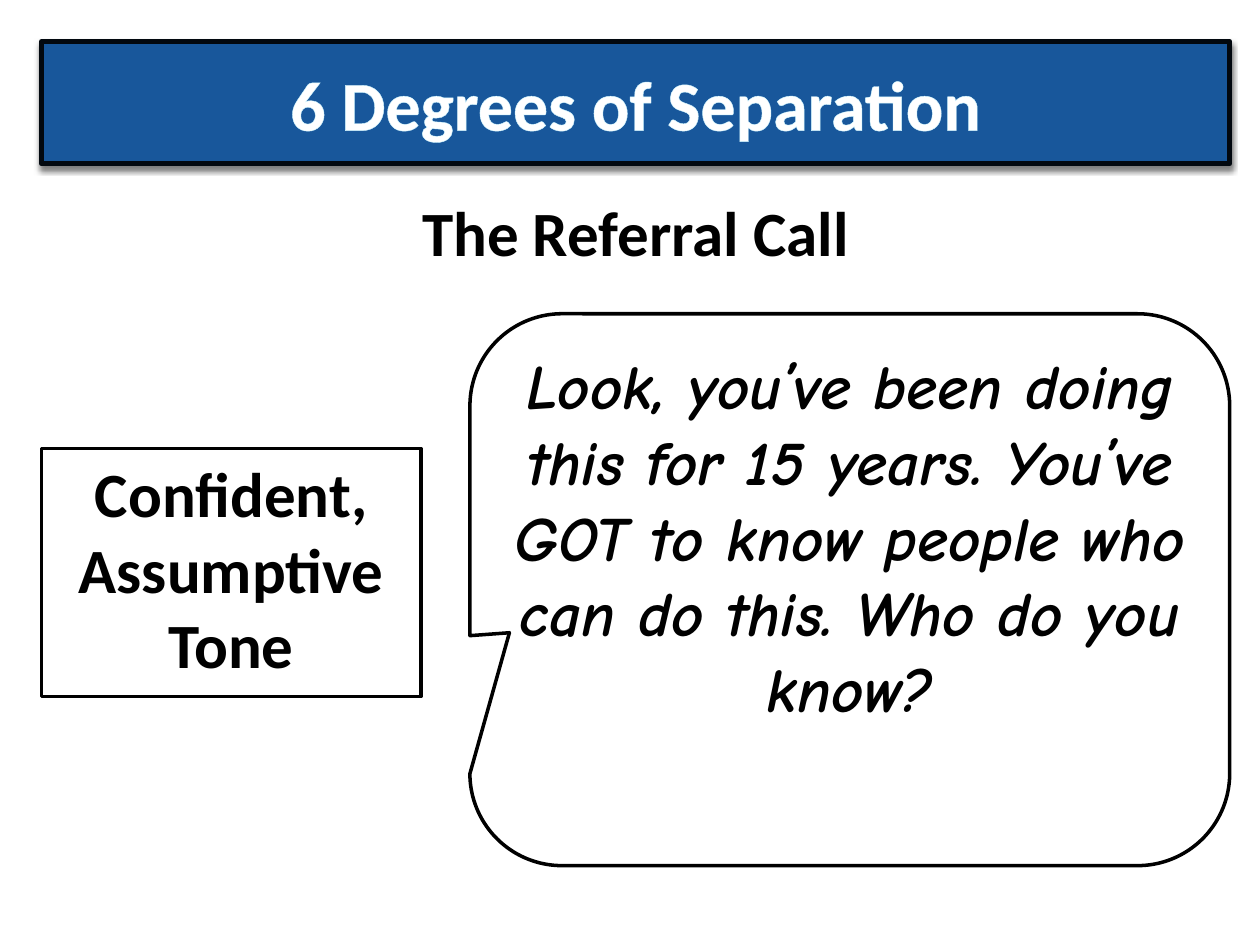
from lxml.etree import SubElement
from pptx import Presentation
from pptx.dml.color import RGBColor
from pptx.enum.shapes import MSO_SHAPE
from pptx.enum.text import MSO_ANCHOR, MSO_AUTO_SIZE, PP_ALIGN
from pptx.oxml import parse_xml
from pptx.oxml.ns import nsdecls, qn
from pptx.util import Inches, Pt

BLUE = RGBColor(0x18, 0x57, 0x9B)
NAVY = RGBColor(0x02, 0x08, 0x0F)
WHITE = RGBColor(0xFF, 0xFF, 0xFF)
BLACK = RGBColor(0x00, 0x00, 0x00)
PALE_BLUE = RGBColor(0xCC, 0xF2, 0xFD)

TITLE = "6 Degrees of Separation"
SUBTITLE = "The Referral Call"
QUOTE = ("Look, you’ve been doing this for 15 years. You’ve GOT to know "
         "people who can do this. Who do you know?")
TONE = "Confident, Assumptive Tone"

LEFT, WIDTH = 0.33, 9.43
TONE_WIDTH, GAP = 3.01, 0.39
QUOTE_LEFT = LEFT + TONE_WIDTH + GAP
QUOTE_WIDTH = WIDTH - TONE_WIDTH - GAP
QUOTE_TOP, QUOTE_HEIGHT, TONE_HEIGHT = 2.49, 4.38, 1.97

BOXES = [
    (SUBTITLE, MSO_SHAPE.RECTANGLE, (LEFT, 1.5, WIDTH, 0.67),
     WHITE, MSO_ANCHOR.MIDDLE, "Calibri", False, ()),
    (QUOTE, MSO_SHAPE.ROUNDED_RECTANGULAR_CALLOUT,
     (QUOTE_LEFT, QUOTE_TOP, QUOTE_WIDTH, QUOTE_HEIGHT),
     BLACK, MSO_ANCHOR.TOP, "Comic Neue", True, (-0.448, 0.078, 0.167)),
    (TONE, MSO_SHAPE.RECTANGLE, (LEFT, 3.56, TONE_WIDTH, TONE_HEIGHT),
     BLACK, MSO_ANCHOR.TOP, "Calibri", False, ()),
]


def style_shape(shape, fill, line, line_width):
    shape.fill.solid()
    shape.fill.fore_color.rgb = fill
    shape.line.color.rgb = line
    shape.line.width = Pt(line_width)
    shape.shadow.inherit = False


def write_text(shape, text, anchor, font_name, size, color, italic=False):
    frame = shape.text_frame
    frame.word_wrap = True
    frame.auto_size = MSO_AUTO_SIZE.NONE
    frame.vertical_anchor = anchor
    paragraph = frame.paragraphs[0]
    paragraph.alignment = PP_ALIGN.CENTER
    run = paragraph.add_run()
    run.text = text
    run.font.name = font_name
    run.font.size = Pt(size)
    run.font.bold = True
    run.font.italic = italic
    run.font.color.rgb = color
    return run


def add_shadow(shape):
    effects = shape.element.spPr.find(qn("a:effectLst"))
    shadow = SubElement(effects, qn("a:outerShdw"), blurRad=str(Pt(3)),
                        dist=str(Pt(2)), dir="5400000", rotWithShape="0")
    color = SubElement(shadow, qn("a:srgbClr"), val=str(BLACK))
    SubElement(color, qn("a:alpha"), val="50000")


def outline_text(run, color):
    run.font.element.insert(0, parse_xml(
        f'<a:ln {nsdecls("a")} w="{Pt(1)}"><a:solidFill>'
        f'<a:srgbClr val="{color}"/></a:solidFill></a:ln>')) if hasattr(
            run.font, "element") else run._r.get_or_add_rPr().insert(0, parse_xml(
                f'<a:ln {nsdecls("a")} w="{Pt(1)}"><a:solidFill>'
                f'<a:srgbClr val="{color}"/></a:solidFill></a:ln>'))


def main():
    presentation = Presentation()
    presentation.slide_width = Inches(10)
    presentation.slide_height = Inches(7.5)
    slide = presentation.slides.add_slide(presentation.slide_layouts[5])

    title = slide.shapes.title
    title.left, title.top, title.width, title.height = map(
        Inches, (LEFT, 0.33, WIDTH, 0.97))
    style_shape(title, BLUE, NAVY, 3)
    add_shadow(title)
    run = write_text(title, TITLE, MSO_ANCHOR.MIDDLE, "Calibri", 40, WHITE)
    outline_text(run, PALE_BLUE)

    for text, kind, place, line, anchor, font_name, italic, adjustments in BOXES:
        shape = slide.shapes.add_shape(kind, *map(Inches, place))
        for index, value in enumerate(adjustments):
            shape.adjustments[index] = value
        style_shape(shape, WHITE, line, 2)
        write_text(shape, text, anchor, font_name, 36, BLACK, italic)

    presentation.save("out.pptx")


if __name__ == "__main__":
    main()
